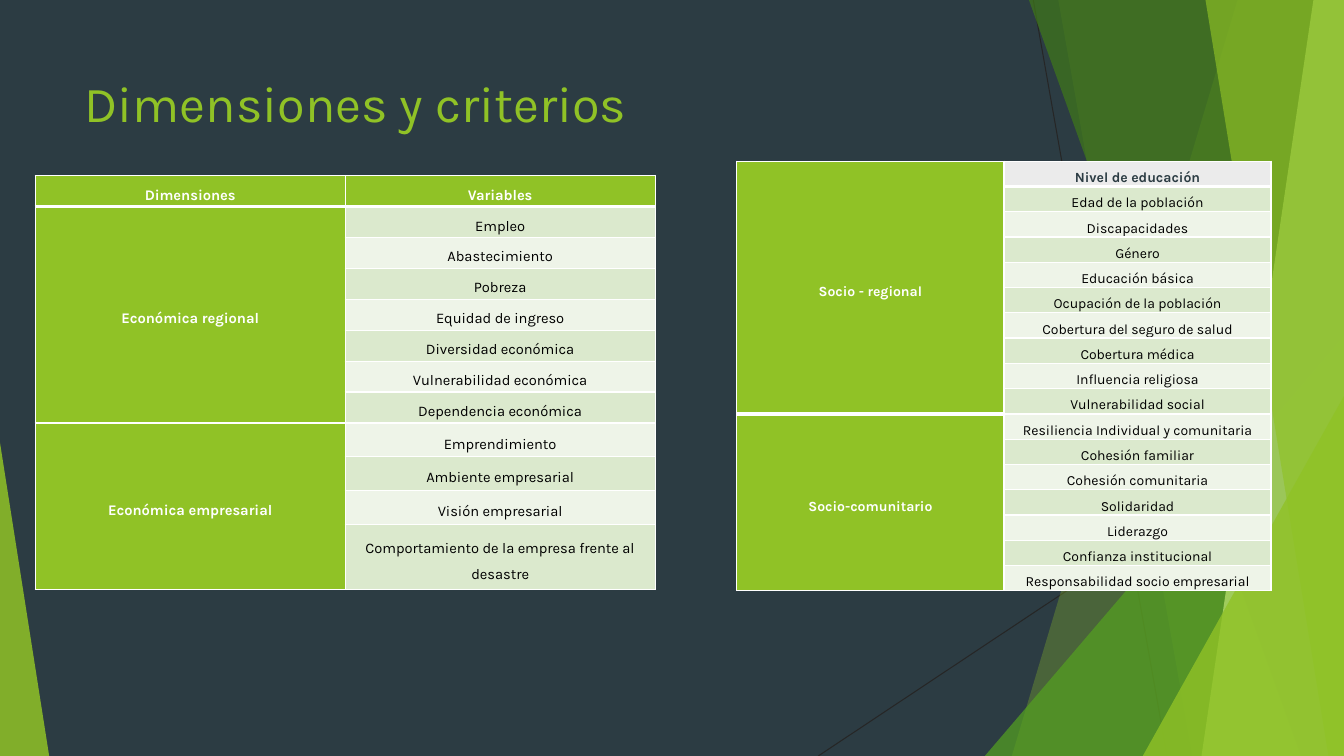
from lxml import etree
from pptx import Presentation
from pptx.dml.color import RGBColor
from pptx.enum.shapes import MSO_CONNECTOR, MSO_SHAPE
from pptx.enum.text import MSO_ANCHOR, PP_ALIGN
from pptx.oxml.ns import qn
from pptx.util import Cm, Pt

STRAIGHT = MSO_CONNECTOR.STRAIGHT
TRIANGLE = MSO_SHAPE.ISOSCELES_TRIANGLE
TOP, MIDDLE = MSO_ANCHOR.TOP, MSO_ANCHOR.MIDDLE
CENTER = PP_ALIGN.CENTER

THEME = {
    "font": "Karla",
    "title_size": 36, "economic_size": 10.5, "social_size": 10,
    "night": "2C3C43", "lime": "90C226", "green": "54A021", "forest": "3F7819",
    "pale": "C0E474", "thread": "262626", "white": "FFFFFF", "black": "000000",
    "grey": "EBEBEB", "row_odd": "DBE9CD", "row_even": "EEF4E8",
}
WIDTH, HEIGHT = 33.87, 19.05
CELL_FORMAT = {"margin_left": Cm(0.18), "margin_right": Cm(0.18), "margin_top": 0,
               "margin_bottom": 0, "vertical_anchor": MIDDLE}
TITLE_FORMAT = {"word_wrap": True, "vertical_anchor": TOP}


def style_text(paragraph, size, color, bold=False):
    font = paragraph.font
    for name, value in {"name": THEME["font"], "size": Pt(size), "bold": bold}.items():
        setattr(font, name, value)
    font.color.rgb = RGBColor.from_string(THEME[color])


def style_cell(cell, text, size, fill, color, bold, thick_bottom):
    for name, value in CELL_FORMAT.items():
        setattr(cell, name, value)
    properties = cell._tc.get_or_add_tcPr()
    for side in "LRTB":
        points = 3 if side == "B" and thick_bottom else 1
        border = etree.SubElement(properties, qn(f"a:ln{side}"), w=str(Pt(points)))
        paint = etree.SubElement(border, qn("a:solidFill"))
        etree.SubElement(paint, qn("a:srgbClr"), val=THEME["white"])
    cell.fill.solid()
    cell.fill.fore_color.rgb = RGBColor.from_string(THEME[fill])
    paragraph = cell.text_frame.paragraphs[0]
    paragraph.text = text
    paragraph.alignment = CENTER
    paragraph.line_spacing = 1.5
    style_text(paragraph, size, color, bold)


deck = Presentation()
deck.slide_width, deck.slide_height = Cm(WIDTH), Cm(HEIGHT)
slide = deck.slides.add_slide(deck.slide_layouts[6])
slide.background.fill.solid()
slide.background.fill.fore_color.rgb = RGBColor.from_string(THEME["night"])

# Thin threads behind the facets
for ends in [(26.04, 0, 29.41, HEIGHT), (WIDTH, 10.24, 20.62, HEIGHT)]:
    thread = slide.shapes.add_connector(STRAIGHT, *map(Cm, ends))
    thread.line.color.rgb = RGBColor.from_string(THEME["thread"])
    thread.line.width = Pt(0.75)
    etree.SubElement(thread._element.spPr, qn("a:effectLst"))

# Facets: a band has its left edge's top and bottom x,
# a triangle has left, top, width and the place of its tip
facets = [
    ((31.19, 25.5), "lime", 30),
    ((26.67, 30.05), "lime", 20),
    ((24.82, 8.46, 9.05, 1), "green", 72),
    ((25.93, 32.79), "forest", 70),
    ((33.1, 30.28), "pale", 70),
    ((30.38, 33.48), "lime", 65),
    ((28.8, 9.98, 5.07, 1), "lime", 80),
    ((0, 11.15, 1.24, 0), "lime", 85),
]
for place, color, opacity in facets:
    if len(place) == 2:
        top_x, bottom_x = place
        outline = slide.shapes.build_freeform(Cm(top_x), 0)
        corners = [(WIDTH, 0), (WIDTH, HEIGHT), (bottom_x, HEIGHT)]
        outline.add_line_segments([(Cm(x), Cm(y)) for x, y in corners], close=True)
        facet = outline.convert_to_shape()
    else:
        left, top, width, tip = place
        facet = slide.shapes.add_shape(TRIANGLE, Cm(left), Cm(top), Cm(width), Cm(HEIGHT - top))
        facet.adjustments[0] = tip
    facet.shadow.inherit = False
    facet.line.fill.background()
    facet.fill.solid()
    facet.fill.fore_color.rgb = RGBColor.from_string(THEME[color])
    tint = facet._element.spPr.find(qn("a:solidFill")).find(qn("a:srgbClr"))
    etree.SubElement(tint, qn("a:alpha"), val=str(opacity * 1000))

# Title
title = slide.shapes.add_textbox(Cm(1.88), Cm(1.7), Cm(23.88), Cm(3.66)).text_frame
for name, value in TITLE_FORMAT.items():
    setattr(title, name, value)
title.text = "Dimensiones y criterios"
style_text(title.paragraphs[0], THEME["title_size"], "lime")

# Dimensions, each with its variables
economic = [
    ("Dimensiones", ["Variables"]),
    ("Económica regional", [
        "Empleo", "Abastecimiento", "Pobreza", "Equidad de ingreso", "Diversidad económica",
        "Vulnerabilidad económica", "Dependencia económica"]),
    ("Económica empresarial", [
        "Emprendimiento", "Ambiente empresarial", "Visión empresarial",
        "Comportamiento de la empresa frente al desastre"]),
]
social = [
    ("Socio - regional", [
        "Nivel de educación", "Edad de la población", "Discapacidades", "Género",
        "Educación básica", "Ocupación de la población", "Cobertura del seguro de salud",
        "Cobertura médica", "Influencia religiosa", "Vulnerabilidad social"]),
    ("Socio-comunitario", [
        "Resiliencia Individual y comunitaria", "Cohesión familiar", "Cohesión comunitaria",
        "Solidaridad", "Liderazgo", "Confianza institucional",
        "Responsabilidad socio empresarial"]),
]
economic_heights = [0.78] * 8 + [0.85] * 3 + [1.65]
social_heights = [0.63] * 17

# Tables: place, column width, row heights, type size, fill and colour of the top variable
tables = [
    (economic, 0.89, 4.42, 7.81, economic_heights, THEME["economic_size"], "lime", "white"),
    (social, 18.57, 4.06, 6.73, social_heights, THEME["social_size"], "grey", "night"),
]
for dimensions, left, top, column, heights, size, top_fill, top_color in tables:
    grid = slide.shapes.add_table(len(heights), 2, Cm(left), Cm(top),
                                  Cm(2 * column), Cm(sum(heights))).table
    for row, height in zip(grid.rows, heights):
        row.height = Cm(height)
    first = 0
    for dimension, variables in dimensions:
        last = first + len(variables) - 1
        if last > first:
            grid.cell(first, 0).merge(grid.cell(last, 0))
        for index, variable in enumerate(variables, first):
            style_cell(grid.cell(index, 0), dimension if index == first else "",
                       size, "lime", "white", True, first == 0)
            if index == 0:
                look = (top_fill, top_color, True, True)
            else:
                look = ("row_odd" if index % 2 else "row_even", "black", False, False)
            style_cell(grid.cell(index, 1), variable, size, *look)
        first = last + 1

deck.save("out.pptx")
